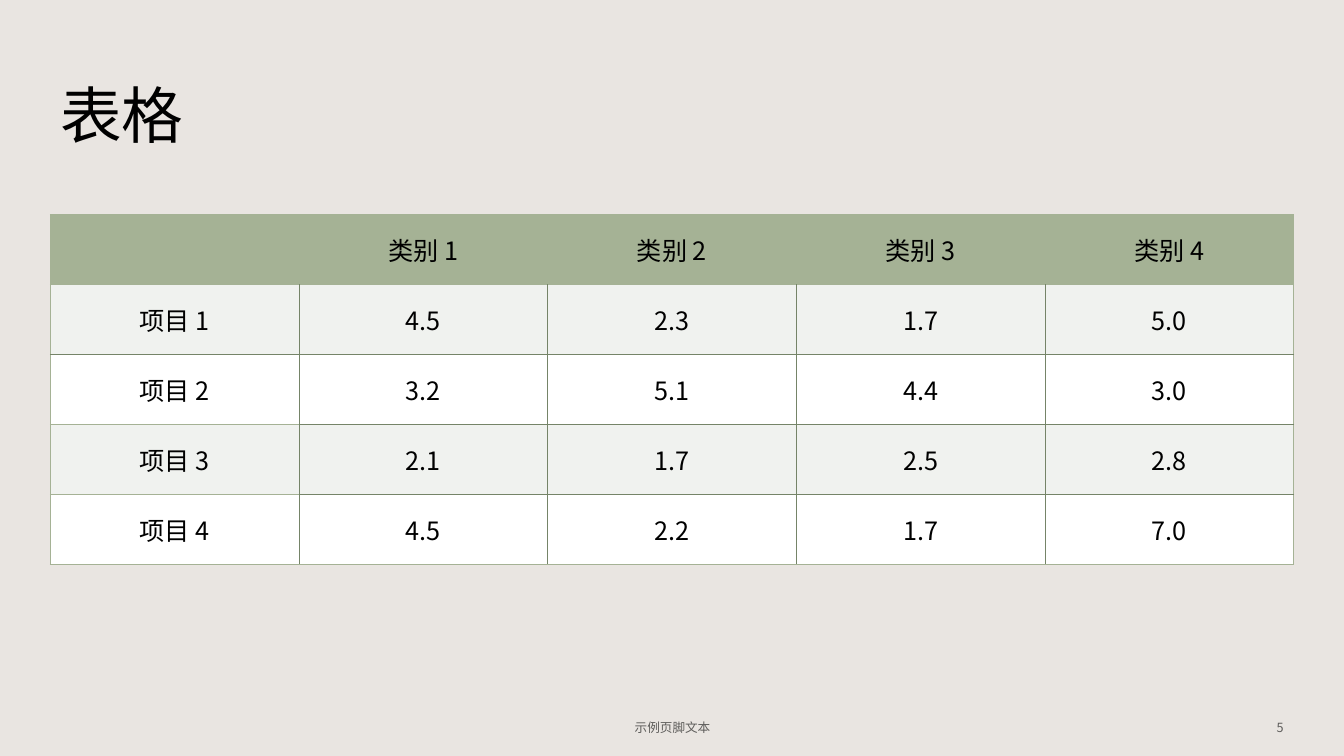
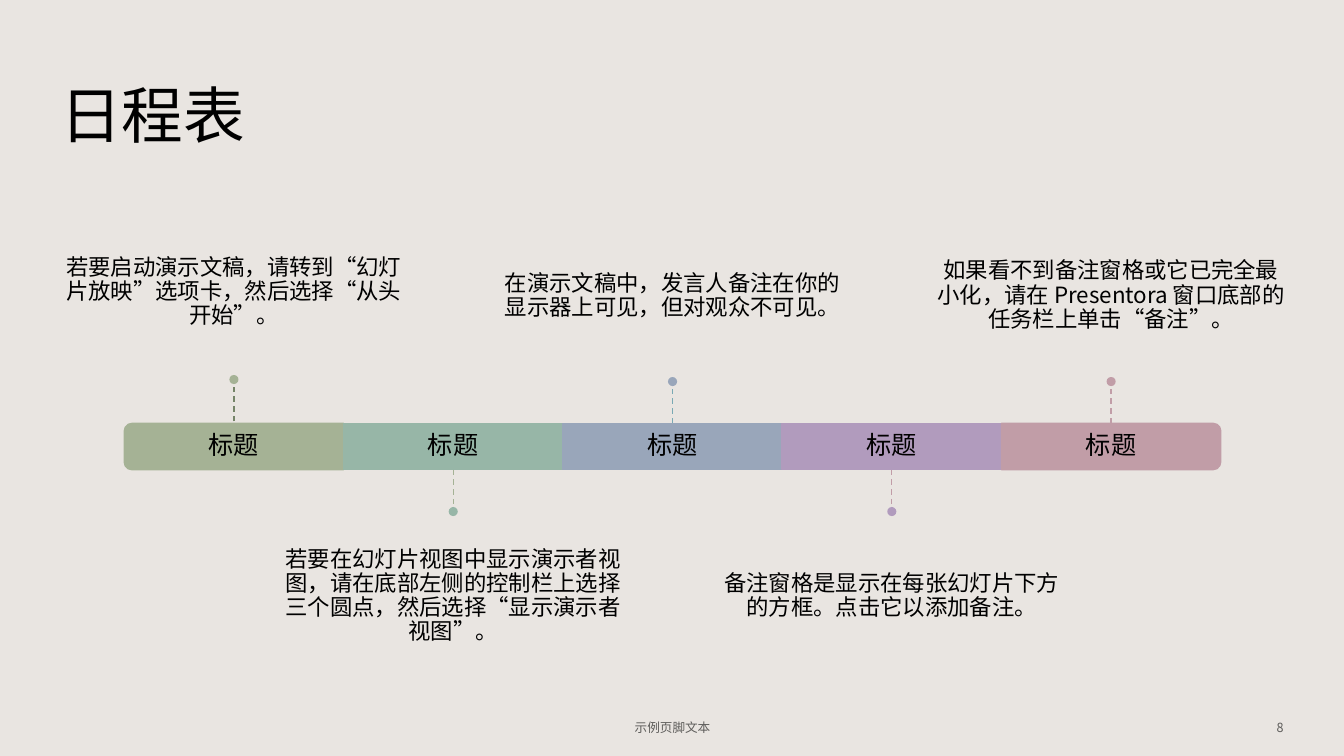
from pptx import Presentation
from pptx.dml.color import RGBColor
from pptx.enum.dml import MSO_LINE
from pptx.enum.lang import MSO_LANGUAGE_ID
from pptx.enum.shapes import MSO_CONNECTOR, MSO_SHAPE
from pptx.enum.text import MSO_ANCHOR, PP_ALIGN
from pptx.oxml.ns import qn
from pptx.util import Inches, Pt
from lxml.etree import SubElement

BLACK = RGBColor(0x00, 0x00, 0x00)
WHITE = RGBColor(0xFF, 0xFF, 0xFF)
SAND = RGBColor(0xE9, 0xE5, 0xE1)
GRAY = RGBColor(0x5D, 0x5C, 0x5A)
PALE = RGBColor(0xF0, 0xF2, 0xEF)
MOSS = RGBColor(0x75, 0x84, 0x68)
SAGE = RGBColor(0xA5, 0xB2, 0x95)
MINT = RGBColor(0x97, 0xB6, 0xA7)
BLUE = RGBColor(0x99, 0xA6, 0xBA)
TEAL = RGBColor(0x79, 0xA9, 0xB4)
PLUM = RGBColor(0xB1, 0x9B, 0xBD)
ROSE = RGBColor(0xC1, 0x9D, 0xA7)

FACE = "Noto Sans CJK SC"
BASE = {"name": FACE, "bold": False,
        "language_id": MSO_LANGUAGE_ID.SIMPLIFIED_CHINESE}
HEAD = {**BASE, "size": Pt(44)}
BODY = {**BASE, "size": Pt(18)}
NOTE = {**BASE, "size": Pt(16)}
FOOT = {**BASE, "size": Pt(9)}
SIDES = ("left", "top", "right", "bottom")

ROWS = [
    ["", "类别 1", "类别 2", "类别 3", "类别 4"],
    ["项目 1", "4.5", "2.3", "1.7", "5.0"],
    ["项目 2", "3.2", "5.1", "4.4", "3.0"],
    ["项目 3", "2.1", "1.7", "2.5", "2.8"],
    ["项目 4", "4.5", "2.2", "1.7", "7.0"],
]
STEPS = [
    (SAGE, MOSS, 0.02, 1.54, "若要启动演示文稿，请转到“幻灯片放映”选项卡，然后选择“从头开始”。"),
    (MINT, SAGE, 0, 1.61, "若要在幻灯片视图中显示演示者视图，请在底部左侧的控制栏上选择三个圆点，然后选择“显示演示者视图”。"),
    (BLUE, TEAL, 0, 1.61, "在演示文稿中，发言人备注在你的显示器上可见，但对观众不可见。"),
    (PLUM, ROSE, 0, 1.61, "备注窗格是显示在每张幻灯片下方的方框。点击它以添加备注。"),
    (ROSE, ROSE, 0, 1.61, "如果看不到备注窗格或它已完全最小化，请在 Presentora 窗口底部的任务栏上单击“备注”。"),
]
MID = 6.67
PITCH = 8.7 / 4
TOP, TALL = 4.2, 0.46
STEM, DOT = 0.37, 0.09


def style(para, text, look, align, hue=BLACK):
    run = para.add_run()
    run.text = text
    for key, val in look.items():
        setattr(run.font, key, val)
    run.font.color.rgb = hue
    SubElement(run.font._element, qn("a:ea"), typeface=FACE)
    para.alignment = align


def write(shape, text, look, align=PP_ALIGN.CENTER, hue=BLACK, pads=None, space=None):
    frame = shape.text_frame
    frame.word_wrap = True
    frame.vertical_anchor = MSO_ANCHOR.MIDDLE
    for side, pad in zip(SIDES, pads or ()):
        setattr(frame, f"margin_{side}", Inches(pad))
    para = frame.paragraphs[0]
    style(para, text, look, align, hue)
    if space:
        para.line_spacing = space


def place(box):
    return [Inches(val) for val in box]


def label(slide, box, *args, **opts):
    write(slide.shapes.add_textbox(*place(box)), *args, **opts)


def block(slide, kind, box, hue, line=True):
    shape = slide.shapes.add_shape(kind, *place(box))
    shape.shadow.inherit = False
    shape.fill.solid()
    shape.fill.fore_color.rgb = hue
    if line:
        shape.line.color.rgb = hue
        shape.line.width = Pt(1)
    else:
        shape.line.fill.background()
    return shape


def stem(slide, x, start, end, hue):
    line = slide.shapes.add_connector(
        MSO_CONNECTOR.STRAIGHT, *place((x, start, x, end)))
    line.line.color.rgb = hue
    line.line.width = Pt(1)
    line.line.dash_style = MSO_LINE.DASH
    SubElement(line._element.spPr, qn("a:effectLst"))
    return line


def start(deck, title, page):
    slide = deck.slides.add_slide(deck.slide_layouts[6])
    label(slide, (0.5, 0.4, 11.92, 1.45), title, HEAD, PP_ALIGN.LEFT)
    label(slide, (4.42, 7.02, 4.5, 0.4), "示例页脚文本", FOOT, hue=GRAY)
    label(slide, (9.83, 7.02, 3, 0.4), page, FOOT, PP_ALIGN.RIGHT, GRAY)
    return slide


def edges(cell, row, col):
    last = len(ROWS) - 1
    first = col == 0
    soft = {
        "L": first,
        "R": col == last,
        "T": row == 1 or first and row > 2,
        "B": row == last or first and row > 1,
    }
    props = cell._tc.get_or_add_tcPr()
    for side, light in soft.items():
        light = light or row == 0
        width = Pt(1) if light else Pt(0.5)
        line = SubElement(props, qn(f"a:ln{side}"), w=str(width))
        fill = SubElement(line, qn("a:solidFill"))
        SubElement(fill, qn("a:srgbClr"), val=str(SAGE if light else MOSS))


def grid(slide):
    size = len(ROWS)
    table = slide.shapes.add_table(
        size, size, *place((0.5, 2.13, 12.33, 3.47))).table
    for row, texts in enumerate(ROWS):
        for col, text in enumerate(texts):
            cell = table.cell(row, col)
            edges(cell, row, col)
            cell.fill.solid()
            cell.fill.fore_color.rgb = SAGE if row == 0 else PALE if row % 2 else WHITE
            cell.vertical_anchor = MSO_ANCHOR.MIDDLE
            if text:
                style(cell.text_frame.paragraphs[0], text, BODY, PP_ALIGN.CENTER)


def step(slide, num, hue, tint, lift, high, text):
    x = MID + (num - 2) * PITCH
    box = (x - PITCH / 2, TOP, PITCH, TALL)
    look = {"pads": (0.04, 0, 0.04, 0), "space": 0.9}
    end = num in (0, len(STEPS) - 1)
    if end:
        turn = (x - TALL / 2, TOP + (TALL - PITCH) / 2, TALL, PITCH)
        bar = block(slide, MSO_SHAPE.ROUND_2_SAME_RECTANGLE, turn, hue)
        bar.rotation = 90 if num else 270
        label(slide, box, "标题", BODY, **look)
    else:
        bar = block(slide, MSO_SHAPE.RECTANGLE, box, hue)
        write(bar, "标题", BODY, **look)
    above = num % 2 == 0
    base = TOP - lift if above else TOP + TALL
    tip = base - STEM if above else base + STEM
    line = stem(slide, x, base, tip, tint)
    if not end:
        line.begin_connect(bar, 0 if above else 2)
    dot = (x - DOT / 2, tip - DOT if above else tip, DOT, DOT)
    block(slide, MSO_SHAPE.OVAL, dot, hue, False)
    label(slide, (x - 1.81, 2.13 if above else 5.11, 3.62, high), text, NOTE,
          pads=(0.06, 0.03, 0.06, 0.03), space=0.9)


def main():
    deck = Presentation()
    deck.slide_width, deck.slide_height = place((13.33, 7.5))
    back = deck.slide_master.background.fill
    back.solid()
    back.fore_color.rgb = SAND
    grid(start(deck, "表格", "5"))
    slide = start(deck, "日程表", "8")
    for num, data in enumerate(STEPS):
        step(slide, num, *data)
    deck.save("out.pptx")


if __name__ == "__main__":
    main()
